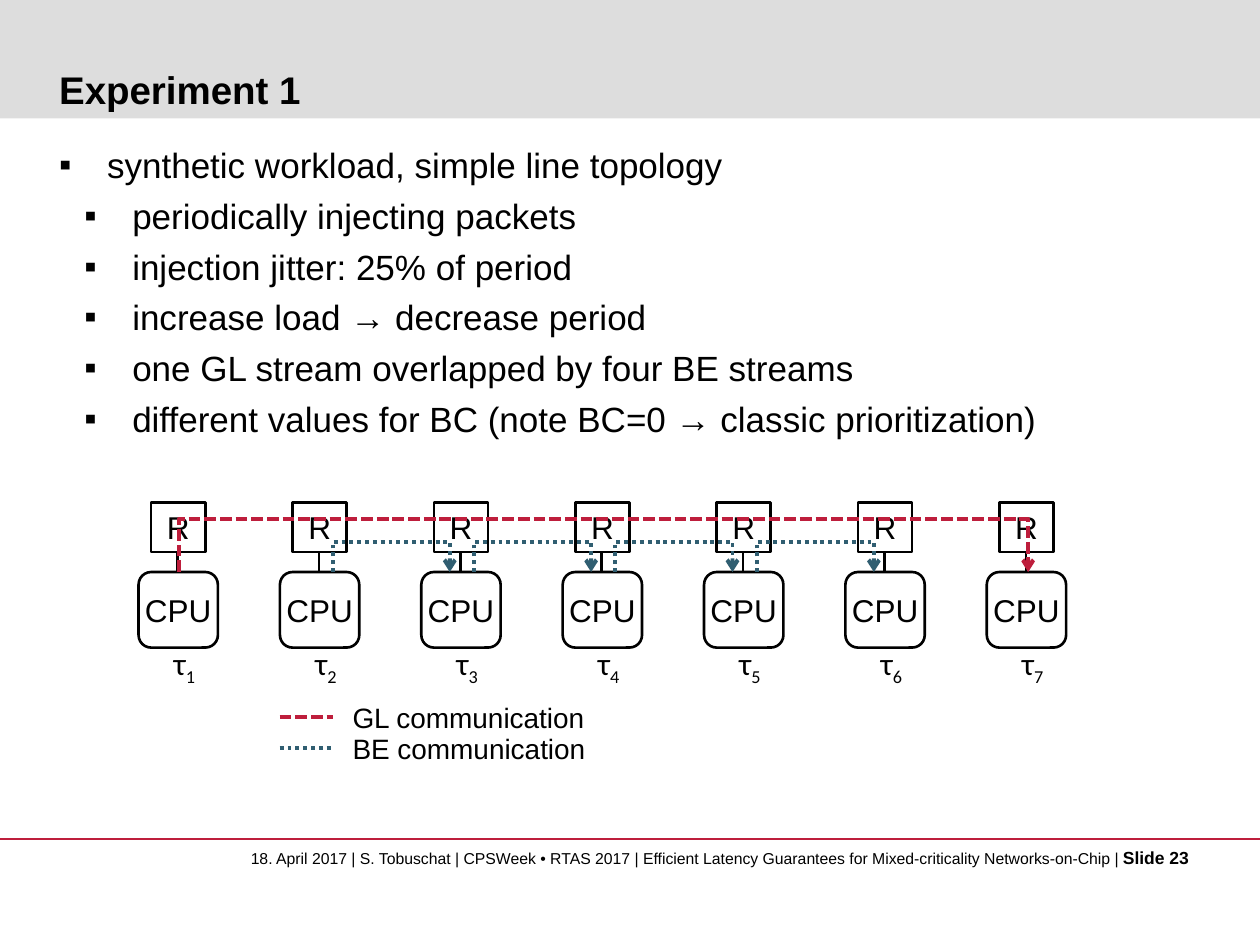
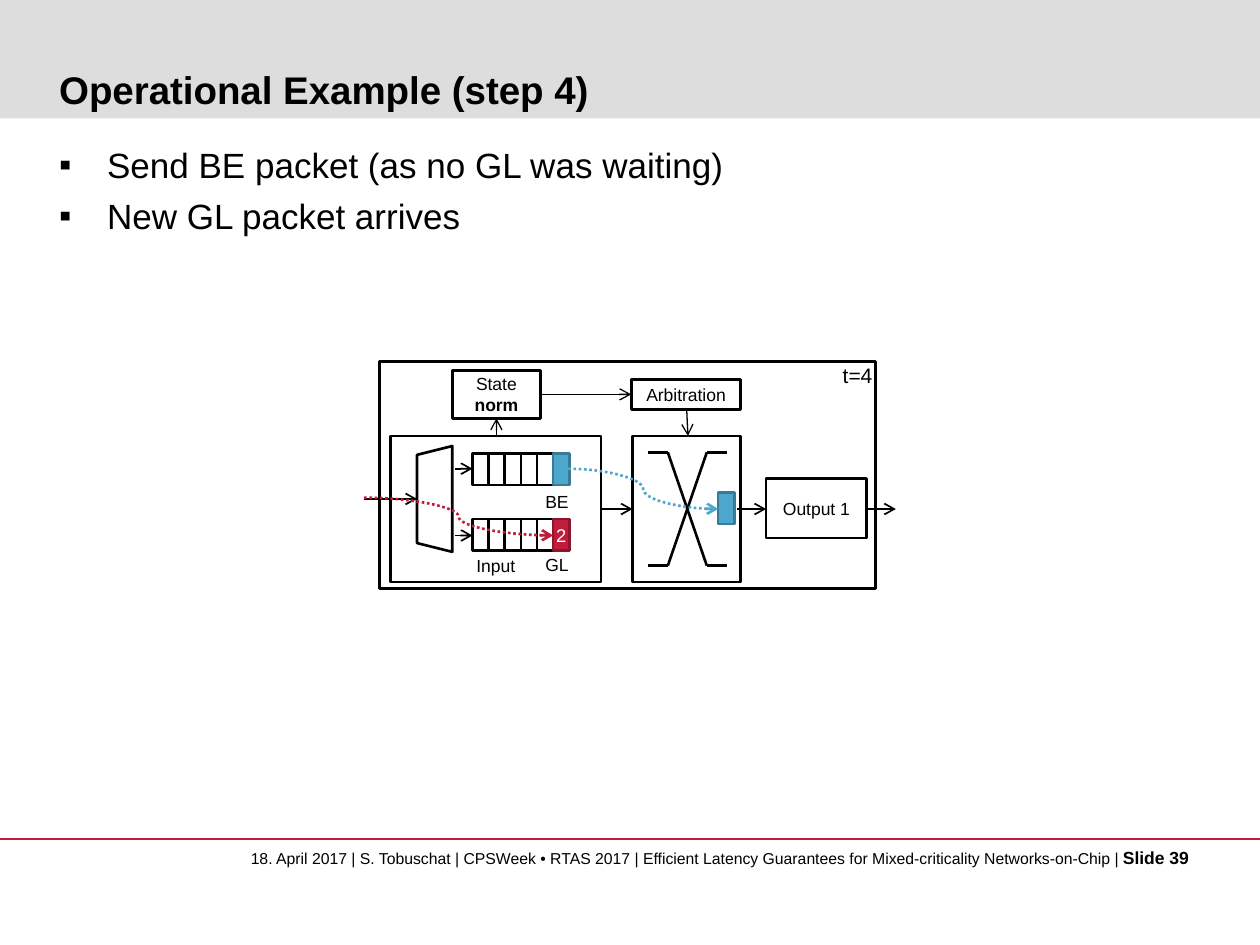
"""Builds two slides on latency guarantees for mixed-criticality networks-on-chip."""
from typing import NamedTuple

from lxml import etree
from pptx import Presentation
from pptx.dml.color import RGBColor
from pptx.enum.dml import MSO_LINE
from pptx.enum.shapes import MSO_CONNECTOR, MSO_SHAPE
from pptx.enum.text import MSO_ANCHOR, PP_ALIGN
from pptx.oxml.ns import qn
from pptx.util import Inches, Pt

RECT, ROUNDED, TRAPEZOID = MSO_SHAPE.RECTANGLE, MSO_SHAPE.ROUNDED_RECTANGLE, MSO_SHAPE.TRAPEZOID
STRAIGHT, CURVE = MSO_CONNECTOR.STRAIGHT, MSO_CONNECTOR.CURVE
DASHED, DOTTED = MSO_LINE.SQUARE_DOT, MSO_LINE.ROUND_DOT
TOP, MIDDLE, BOTTOM = MSO_ANCHOR.TOP, MSO_ANCHOR.MIDDLE, MSO_ANCHOR.BOTTOM
CENTER = PP_ALIGN.CENTER

BLACK = RGBColor(0x00, 0x00, 0x00)
WHITE = RGBColor(0xFF, 0xFF, 0xFF)
BAND_GRAY = RGBColor(0xDD, 0xDD, 0xDD)
RED = RGBColor(0xBE, 0x1E, 0x3C)
DARK_RED = RGBColor(0x8D, 0x16, 0x2C)
TEAL = RGBColor(0x30, 0x5E, 0x71)
BLUE = RGBColor(0x4D, 0xA6, 0xCB)
DARK_BLUE = RGBColor(0x39, 0x7B, 0x96)

FOOTER = ("18. April 2017 | S. Tobuschat | CPSWeek • RTAS 2017 | "
          "Efficient Latency Guarantees for Mixed-criticality Networks-on-Chip | ")


class Box(NamedTuple):
    """A filled, outlined shape with an optional label; lengths in inches."""
    left: float
    top: float
    width: float
    height: float
    label: str = ""
    size: float = 10
    kind: int = RECT
    fill: RGBColor = WHITE
    outline: RGBColor | None = BLACK
    ink: RGBColor = BLACK
    anchor: int = MIDDLE
    rotation: float = 0


class Stroke(NamedTuple):
    """How a line is drawn."""
    color: RGBColor = BLACK
    width: float = 1
    dash: int | None = None
    arrow: bool = False


class Link(NamedTuple):
    """A connector between two points; lengths in inches."""
    x1: float
    y1: float
    x2: float
    y2: float
    stroke: Stroke = Stroke(arrow=True)
    kind: int = STRAIGHT


class Bullet(NamedTuple):
    """A list item and its level."""
    text: str
    level: int = 0


GL_LINE = Stroke(RED, 2.25, DASHED)
BE_LINE = Stroke(TEAL, 2.25, DOTTED)
OUTLINE = Stroke(width=1.5)
THIN_ARROW = Stroke(width=0.75, arrow=True)


def set_font(paragraph, size: float, color: RGBColor = BLACK, bold: bool = False,
             name: str = "Arial") -> None:
    """Set the font that all runs of a paragraph share."""
    font = paragraph.font
    font.name, font.size, font.bold = name, Pt(size), bold
    font.color.rgb = color


def apply_stroke(shape, stroke: Stroke) -> None:
    """Style the line of a connector or an open outline."""
    shape.line.color.rgb = stroke.color
    shape.line.width = Pt(stroke.width)
    if stroke.dash is not None:
        shape.line.dash_style = stroke.dash
    if stroke.arrow:
        etree.SubElement(shape.line._get_or_add_ln(), qn("a:tailEnd"), type="arrow")


def draw_box(slide, box: Box):
    """Draw a box with its centred label."""
    shape = slide.shapes.add_shape(box.kind, Inches(box.left), Inches(box.top),
                                   Inches(box.width), Inches(box.height))
    shape.shadow.inherit = False
    shape.rotation = box.rotation
    shape.fill.solid()
    shape.fill.fore_color.rgb = box.fill
    if box.outline is None:
        shape.line.fill.background()
    else:
        apply_stroke(shape, Stroke(box.outline, 1.5))
    if box.label:
        frame = shape.text_frame
        frame.margin_left = frame.margin_right = 0
        frame.vertical_anchor = box.anchor
        paragraph = frame.paragraphs[0]
        paragraph.text, paragraph.alignment = box.label, CENTER
        set_font(paragraph, box.size, box.ink)
    return shape


def draw_link(slide, link: Link) -> None:
    """Draw a straight or curved connector."""
    connector = slide.shapes.add_connector(link.kind, Inches(link.x1), Inches(link.y1),
                                           Inches(link.x2), Inches(link.y2))
    apply_stroke(connector, link.stroke)
    etree.SubElement(connector.element.spPr, qn("a:effectLst"))


def draw_route(slide, start: float, end: float, height: float, stroke: Stroke) -> None:
    """Draw an arrow that leaves a CPU, runs along a height and drops to another CPU."""
    base = 4.54
    builder = slide.shapes.build_freeform(Inches(start), Inches(base))
    corners = ((start, height), (end, height), (end, base))
    builder.add_line_segments([(Inches(x), Inches(y)) for x, y in corners], close=False)
    route = builder.convert_to_shape()
    route.shadow.inherit = False
    route.fill.background()
    apply_stroke(route, stroke._replace(arrow=True))


def add_label(slide, left: float, top: float, width: float, height: float,
              text: str, size: float, name: str = "Arial"):
    """Add a one-line label and return its paragraph."""
    label = slide.shapes.add_textbox(Inches(left), Inches(top), Inches(width), Inches(height))
    label.text_frame.word_wrap = False
    paragraph = label.text_frame.paragraphs[0]
    paragraph.text = text
    set_font(paragraph, size, name=name)
    return paragraph


def add_flush_text(slide, left: float, top: float, width: float, height: float,
                   anchor: int = TOP):
    """Add a wrapping text frame without insets."""
    area = slide.shapes.add_textbox(Inches(left), Inches(top), Inches(width), Inches(height))
    frame = area.text_frame
    frame.word_wrap = True
    frame.margin_left = frame.margin_right = frame.margin_top = frame.margin_bottom = 0
    frame.vertical_anchor = anchor
    return frame


def add_bullets(slide, bullets: list[Bullet]) -> None:
    """Fill the body area with square bullets."""
    frame = add_flush_text(slide, 0.47, 1.14, 9.16, 5.22)
    for index, bullet in enumerate(bullets):
        paragraph = frame.add_paragraph() if index else frame.paragraphs[0]
        paragraph.text, paragraph.level = bullet.text, bullet.level
        properties = paragraph._p.get_or_add_pPr()
        properties.set("marL", str(Inches(0.38 + 0.2 * bullet.level)))
        properties.set("indent", str(Inches(-0.38)))
        etree.SubElement(properties, qn("a:buFont"), typeface="Arial")
        etree.SubElement(properties, qn("a:buChar"), char="▪")
        if index:
            paragraph.space_before = Pt(5)
        set_font(paragraph, 20)


def start_slide(deck, title: str, number: int, bullets: list[Bullet]):
    """Add a slide with the shared band, title, body list and footer."""
    slide = deck.slides.add_slide(deck.slide_layouts[6])
    draw_box(slide, Box(0, 0, 10, 0.94, fill=BAND_GRAY, outline=None))
    draw_link(slide, Link(0, 6.66, 10, 6.66, Stroke(RED, 0.75)))

    footer = add_flush_text(slide, 1.99, 6.72, 7.65, 0.17).paragraphs[0]
    footer.text = FOOTER
    set_font(footer, 9)
    slide_number = footer.add_run()
    slide_number.text = f"Slide {number}"
    slide_number.font.size, slide_number.font.bold = Pt(10), True

    heading = add_flush_text(slide, 0.47, 0.12, 8.07, 0.77, BOTTOM).paragraphs[0]
    heading.text = title
    set_font(heading, 22, bold=True)
    add_bullets(slide, bullets)
    return slide


def build_experiment(deck) -> None:
    """Draw the line topology with its GL and BE streams."""
    slide = start_slide(deck, "Experiment 1", 23, [
        Bullet("synthetic workload, simple line topology"),
        Bullet("periodically injecting packets", 1),
        Bullet("injection jitter: 25% of period", 1),
        Bullet("increase load → decrease period", 1),
        Bullet("one GL stream overlapped by four BE streams", 1),
        Bullet("different values for BC (note BC=0 → classic prioritization)", 1),
    ])
    node_count, pitch = 7, 1.122
    for node in range(node_count):
        shift = node * pitch
        draw_box(slide, Box(1.2 + shift, 3.99, 0.43, 0.39, "R", 18))
        draw_box(slide, Box(1.1 + shift, 4.54, 0.63, 0.6, "CPU", 18, ROUNDED))
        draw_link(slide, Link(1.41 + shift, 4.38, 1.41 + shift, 4.54, OUTLINE))
        task = add_label(slide, 1.28 + shift, 5.06, 0.39, 0.4, "τ", 18, "Calibri")
        index = task.add_run()
        index.text = str(node + 1)
        index._r.get_or_add_rPr().set("baseline", "-25000")

    draw_route(slide, 1.42, 8.16, 4.12, GL_LINE)
    for stream in range(4):
        source = 2.64 + stream * pitch
        draw_route(slide, source, source + 0.93, 4.3, BE_LINE)

    for row, (name, stroke) in enumerate((("GL", GL_LINE), ("BE", BE_LINE))):
        y = 5.69 + 0.25 * row
        draw_link(slide, Link(2.22, y, 2.64, y, stroke))
        add_label(slide, 2.7, y - 0.18, 2.06, 0.37, f"{name} communication", 16)


def build_operation(deck) -> None:
    """Draw the router with its queues, arbitration and crossbar."""
    slide = start_slide(deck, "Operational Example (step 4)", 39, [
        Bullet("Send BE packet (as no GL was waiting)"),
        Bullet("New GL packet arrives"),
    ])
    for part in (
        Box(3.01, 2.87, 3.94, 1.8),
        Box(5.01, 3.01, 0.87, 0.24, "Arbitration"),
        Box(3.1, 3.46, 1.67, 1.16, "Input", anchor=BOTTOM),
        Box(3.03, 3.82, 0.84, 0.28, kind=TRAPEZOID, rotation=270),
        Box(6.08, 3.8, 0.8, 0.47, "Output 1"),
        Box(5.02, 3.46, 0.86, 1.16),
    ):
        draw_box(slide, part)
    state = draw_box(slide, Box(3.59, 2.94, 0.7, 0.38, "State")).text_frame.paragraphs[0]
    state.add_line_break()
    mode = state.add_run()
    mode.text, mode.font.bold = "norm", True

    slot = Box(3.75, 3.6, 0.13, 0.25, size=10.5, ink=WHITE)
    be_packet = slot._replace(fill=BLUE, outline=DARK_BLUE)
    gl_packet = slot._replace(fill=RED, outline=DARK_RED, label="2")
    for top, packet in ((3.6, be_packet), (4.12, gl_packet)):
        for position, cell in enumerate([slot] * 5 + [packet]):
            draw_box(slide, cell._replace(left=3.75 + 0.128 * position, top=top))
    draw_box(slide, be_packet._replace(left=5.7, top=3.91))

    add_label(slide, 4.23, 3.85, 0.39, 0.27, "BE", 10)
    add_label(slide, 4.23, 4.35, 0.39, 0.27, "GL", 10)
    add_label(slide, 6.59, 2.83, 0.44, 0.3, "t=4", 12)

    upper, lower = 3.59, 4.49
    for y, far in ((upper, lower), (lower, upper)):
        draw_link(slide, Link(5.14, y, 5.3, y, OUTLINE))
        draw_link(slide, Link(5.3, y, 5.61, far, OUTLINE))
        draw_link(slide, Link(5.61, y, 5.77, y, OUTLINE))

    for link in (
        Link(2.89, 3.96, 3.31, 3.96),
        Link(3.61, 3.72, 3.75, 3.72),
        Link(3.61, 4.25, 3.75, 4.25),
        Link(4.78, 4.04, 5.02, 4.04),
        Link(5.85, 4.04, 6.08, 4.04),
        Link(6.88, 4.04, 7.11, 4.04),
        Link(5.45, 3.25, 5.46, 3.46, THIN_ARROW),
        Link(4.29, 3.13, 5.01, 3.13, THIN_ARROW),
        Link(3.94, 3.46, 3.94, 3.32, THIN_ARROW),
        Link(2.89, 3.95, 4.39, 4.25, Stroke(RED, 1.5, DOTTED, True), CURVE),
        Link(4.51, 3.72, 5.7, 4.04, Stroke(BLUE, 1.5, DOTTED, True), CURVE),
    ):
        draw_link(slide, link)


def main() -> None:
    """Build and save the deck."""
    deck = Presentation()
    deck.slide_width, deck.slide_height = Inches(10), Inches(7.5)
    build_experiment(deck)
    build_operation(deck)
    deck.save("out.pptx")


if __name__ == "__main__":
    main()
